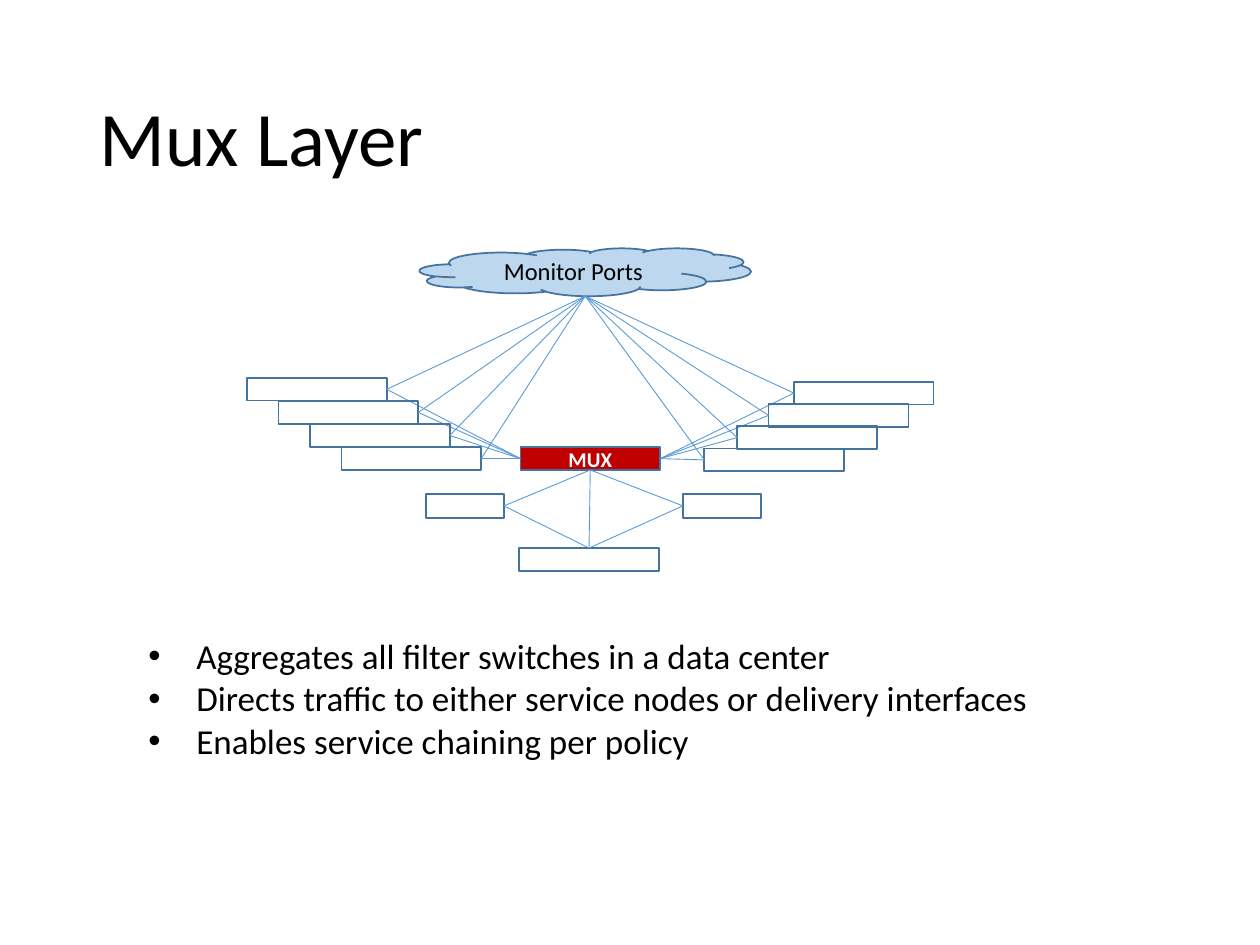
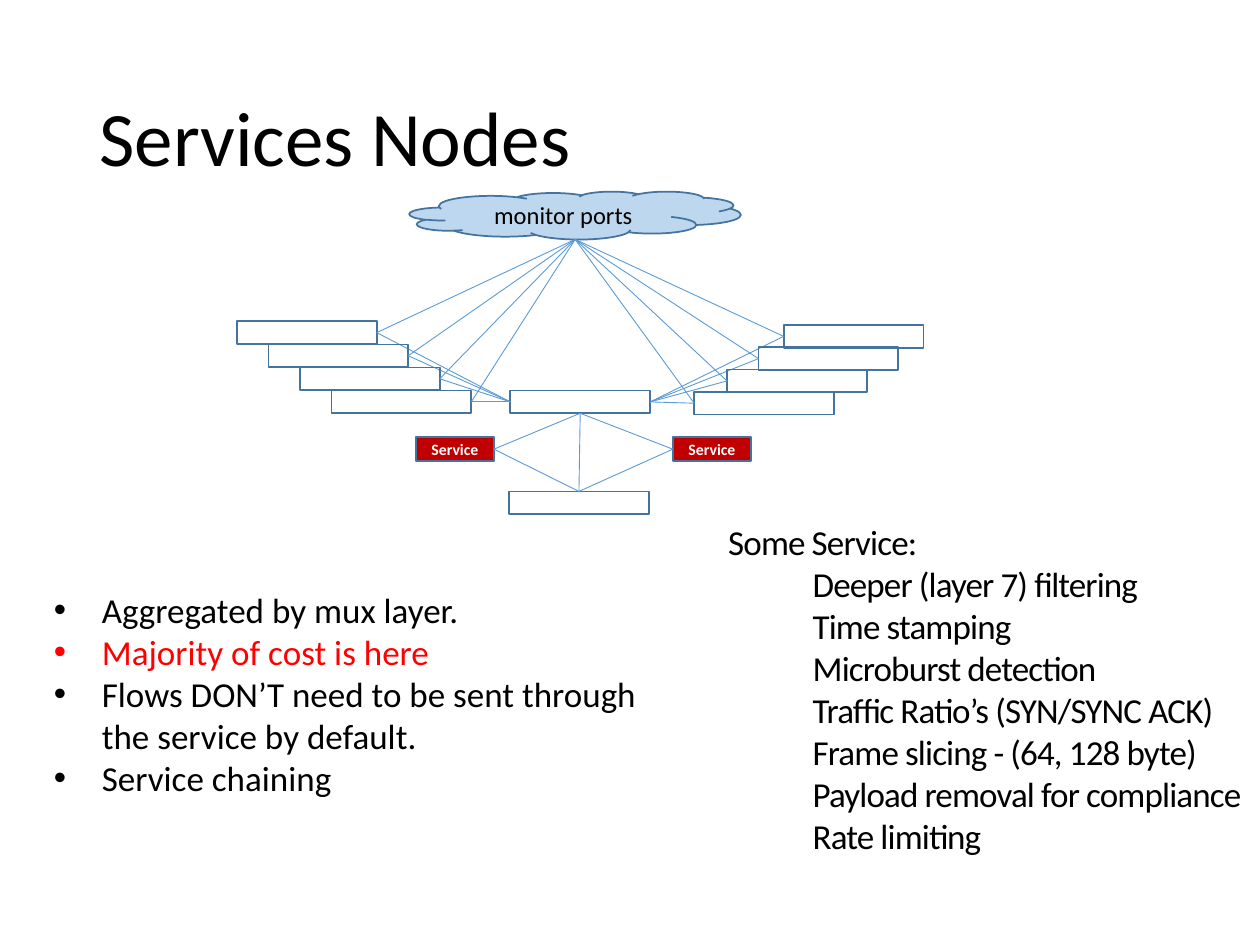
import pptx
import pptx.util
import pptx.dml.color
import pptx.enum.shapes
import pptx.enum.text
import pptx.oxml.ns
import lxml.etree

# Content: one dict per slide; notes are boxes of (text, colour, level) lines
SLIDES = [
    dict(
        title="Mux Layer", cloud="Monitor Ports", spot=(3.33, 1.97),
        labels={"mux": ("MUX", 12)},
        notes=[dict(at=(1.08, 4.99, 7.22, 1.11), bullets=True, lines=[
            ("Aggregates all filter switches in a data center", "ink", 0),
            ("Directs traffic to either service nodes or delivery interfaces", "ink", 0),
            ("Enables service chaining per policy", "ink", 0),
        ])],
    ),
    dict(
        title="Services Nodes", cloud="monitor ports", spot=(3.25, 1.52),
        labels={"west": ("Service", 9), "east": ("Service", 9)},
        notes=[
            dict(at=(0.33, 4.62, 5.01, 1.78), bullets=True, lines=[
                ("Aggregated by mux layer.", "ink", 0),
                ("Majority of cost is here", "alert", 0),
                ("Flows DON’T need to be sent through the service by default.", "ink", 0),
                ("Service chaining", "ink", 0),
            ]),
            dict(at=(5.65, 4.06, 4.36, 2.83), inset=(0.13, 0.07), track=-50, lines=[
                ("Some Service:", "ink", 0),
                ("Deeper (layer 7) filtering", "ink", 1),
                ("Time stamping", "ink", 1),
                ("Microburst detection", "ink", 1),
                ("Traffic Ratio’s (SYN/SYNC ACK)", "ink", 1),
                ("Frame slicing - (64, 128 byte)", "ink", 1),
                ("Payload removal for compliance", "ink", 1),
                ("Rate limiting", "ink", 1),
            ]),
        ],
    ),
]

# Theme
THEME = dict(
    font="Calibri", title=44, body=20, cloud=14, edge=1, link=0.5,
    ink="000000", alert="FF0000", paper="FFFFFF", hot="C00000",
    border="43739E", wire="5B9BD5", haze="40000",
)

# Diagram grid, measured from the cloud's top left corner
CLOUD = (2.63, 0.38)
BAR, NODE = (1.11, 0.18), (0.62, 0.19)
PARTS = {
    "mux": (0.8, 1.58, BAR),
    "west": (0.05, 1.95, NODE),
    "east": (2.09, 1.95, NODE),
    "exit": (0.79, 2.38, BAR),
}
# Filter stacks: column of each bar, first and last row, inner and mux sides
STACKS = [
    ((-1.37, -1.12, -0.87, -0.62), 1.03, 1.58, 3, 1),
    ((2.97, 2.77, 2.52, 2.26), 1.06, 1.59, 1, 3),
]
LINKS = [
    ("west", 3, "mux", 2), ("east", 1, "mux", 2), ("exit", 0, "mux", 2),
    ("west", 3, "exit", 0), ("east", 1, "exit", 0),
]

Inch, Pt = pptx.util.Inches, pptx.util.Pt
KINDS = pptx.enum.shapes.MSO_SHAPE
ALIGN = pptx.enum.text.PP_ALIGN
MID = pptx.enum.text.MSO_ANCHOR.MIDDLE
qn = pptx.oxml.ns.qn


def color(name):
    return pptx.dml.color.RGBColor.from_string(THEME[name])


def write(para, text, size, ink="ink", bold=False):
    run = para.add_run()
    run.text = text
    run.font.name, run.font.size = THEME["font"], Pt(size)
    run.font.bold = bold
    run.font.color.rgb = color(ink)
    return run


def add_title(slide, text):
    box = slide.shapes.title
    box.left, box.top, box.width, box.height = map(Inch, (0.69, 0.4, 8.62, 1.45))
    frame = box.text_frame
    frame.word_wrap, frame.vertical_anchor = True, MID
    frame.auto_size = pptx.enum.text.MSO_AUTO_SIZE.NONE
    para = frame.paragraphs[0]
    para.alignment, para.line_spacing = ALIGN.LEFT, 0.9
    write(para, text, THEME["title"])


def add_part(slide, kind, left, top, size, fill=None):
    shape = slide.shapes.add_shape(kind, *map(Inch, (left, top, *size)))
    shape.shadow.inherit = False
    if fill:
        shape.fill.solid()
        shape.fill.fore_color.rgb = color(fill)
    else:
        shape.fill.background()
    shape.line.color.rgb = color("border")
    shape.line.width = Pt(THEME["edge"])
    shape.text_frame.vertical_anchor = MID
    shape.text_frame.paragraphs[0].alignment = ALIGN.CENTER
    return shape


def add_link(slide, start, end):
    """Join two ends, each a point or a (shape, side) pair."""
    line = slide.shapes.add_connector(
        pptx.enum.shapes.MSO_CONNECTOR.STRAIGHT, 0, 0, 0, 0)
    line.line.color.rgb = color("wire")
    line.line.width = Pt(THEME["link"])
    lxml.etree.SubElement(line._element.spPr, qn("a:effectLst"))
    if isinstance(start[0], int):
        line.begin_x, line.begin_y = start
    else:
        line.begin_connect(*start)
    line.end_connect(*end)


def add_net(slide, page):
    left, top = page["spot"]

    # Cloud of ports
    cloud = add_part(slide, KINDS.CLOUD, left, top, CLOUD, "wire")
    tint = cloud._element.spPr.find(".//" + qn("a:srgbClr"))
    lxml.etree.SubElement(tint, qn("a:alpha")).set("val", THEME["haze"])
    write(cloud.text_frame.paragraphs[0], page["cloud"], THEME["cloud"])
    base = (cloud.left + cloud.width // 2, cloud.top + cloud.height)

    # Mux, service and delivery boxes
    parts = {}
    for name, (col, row, size) in PARTS.items():
        label = page["labels"].get(name)
        part = add_part(slide, KINDS.RECTANGLE, left + col, top + row, size,
                        "hot" if label else None)
        if label:
            write(part.text_frame.paragraphs[0], *label, "paper", True)
        parts[name] = part

    # Filter stacks, wired to the cloud and the mux
    for cols, first, last, inner, side in STACKS:
        step = (last - first) / (len(cols) - 1)
        for i, col in enumerate(cols):
            bar = add_part(slide, KINDS.RECTANGLE, left + col,
                           top + first + i * step, BAR)
            add_link(slide, base, (bar, inner))
            add_link(slide, (parts["mux"], side), (bar, inner))

    for start, out, end, into in LINKS:
        add_link(slide, (parts[start], out), (parts[end], into))


def add_note(slide, note):
    box = slide.shapes.add_textbox(*map(Inch, note["at"]))
    frame = box.text_frame
    frame.word_wrap = True
    if "inset" in note:
        wide, high = map(Inch, note["inset"])
        frame.margin_left = frame.margin_right = wide
        frame.margin_top = frame.margin_bottom = high
    for i, (text, ink, level) in enumerate(note["lines"]):
        para = frame.add_paragraph() if i else frame.paragraphs[0]
        para.level = level
        props = para._p.get_or_add_pPr()
        if note.get("bullets"):
            props.set("marL", str(Inch(0.38)))
            props.set("indent", str(-Inch(0.38)))
            lxml.etree.SubElement(props, qn("a:buFont")).set("typeface", "Arial")
            lxml.etree.SubElement(props, qn("a:buChar")).set("char", "•")
        else:
            props.set("marL", str(Inch(0.67 * level)))
            props.set("indent", "0")
        run = write(para, text, THEME["body"], ink)
        if "track" in note:
            run._r.get_or_add_rPr().set("spc", str(note["track"]))


def main():
    deck = pptx.Presentation()
    deck.slide_width, deck.slide_height = Inch(10), Inch(7.5)
    for page in SLIDES:
        slide = deck.slides.add_slide(deck.slide_layouts[5])
        add_title(slide, page["title"])
        add_net(slide, page)
        for note in page["notes"]:
            add_note(slide, note)
    deck.save("out.pptx")


if __name__ == "__main__":
    main()
